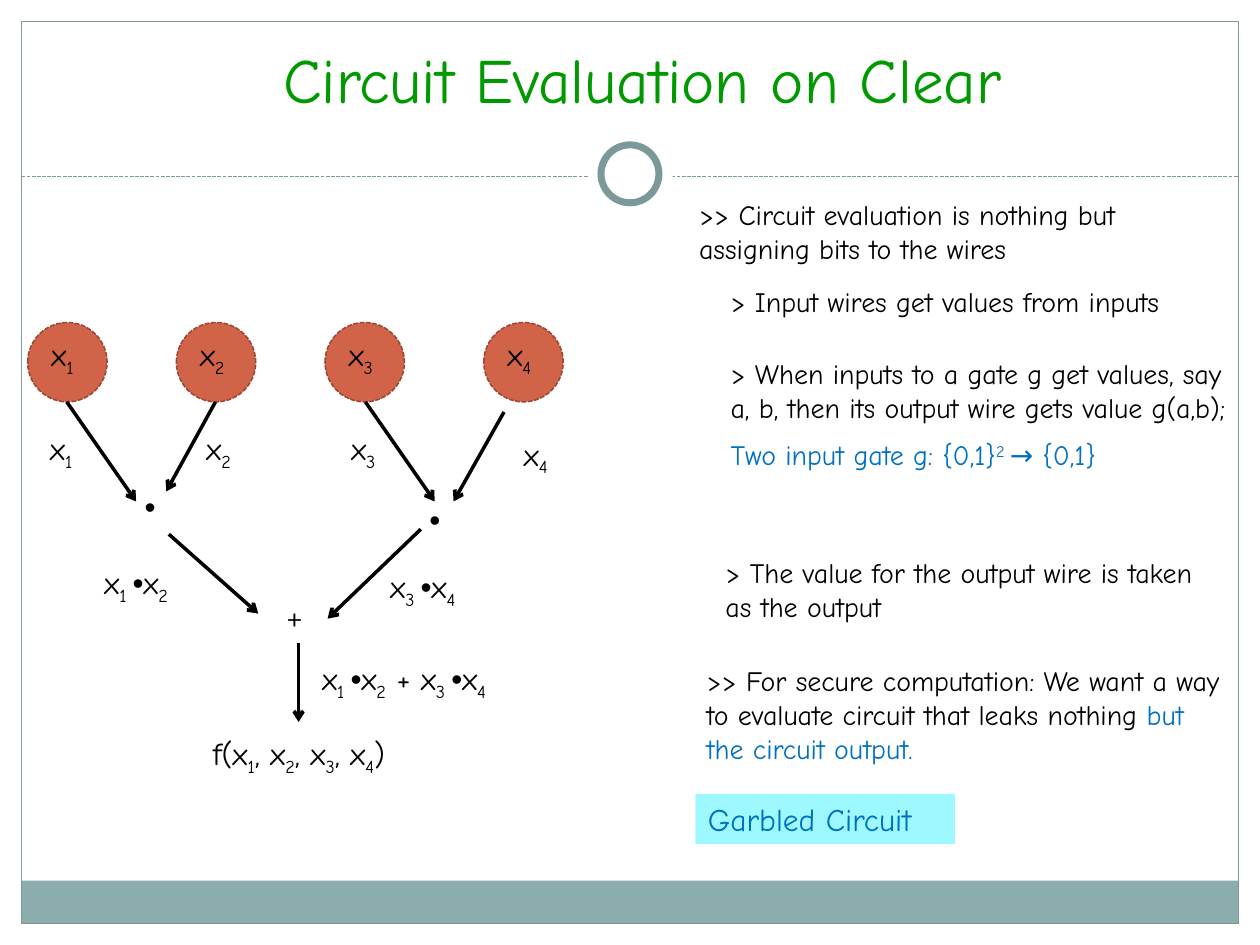
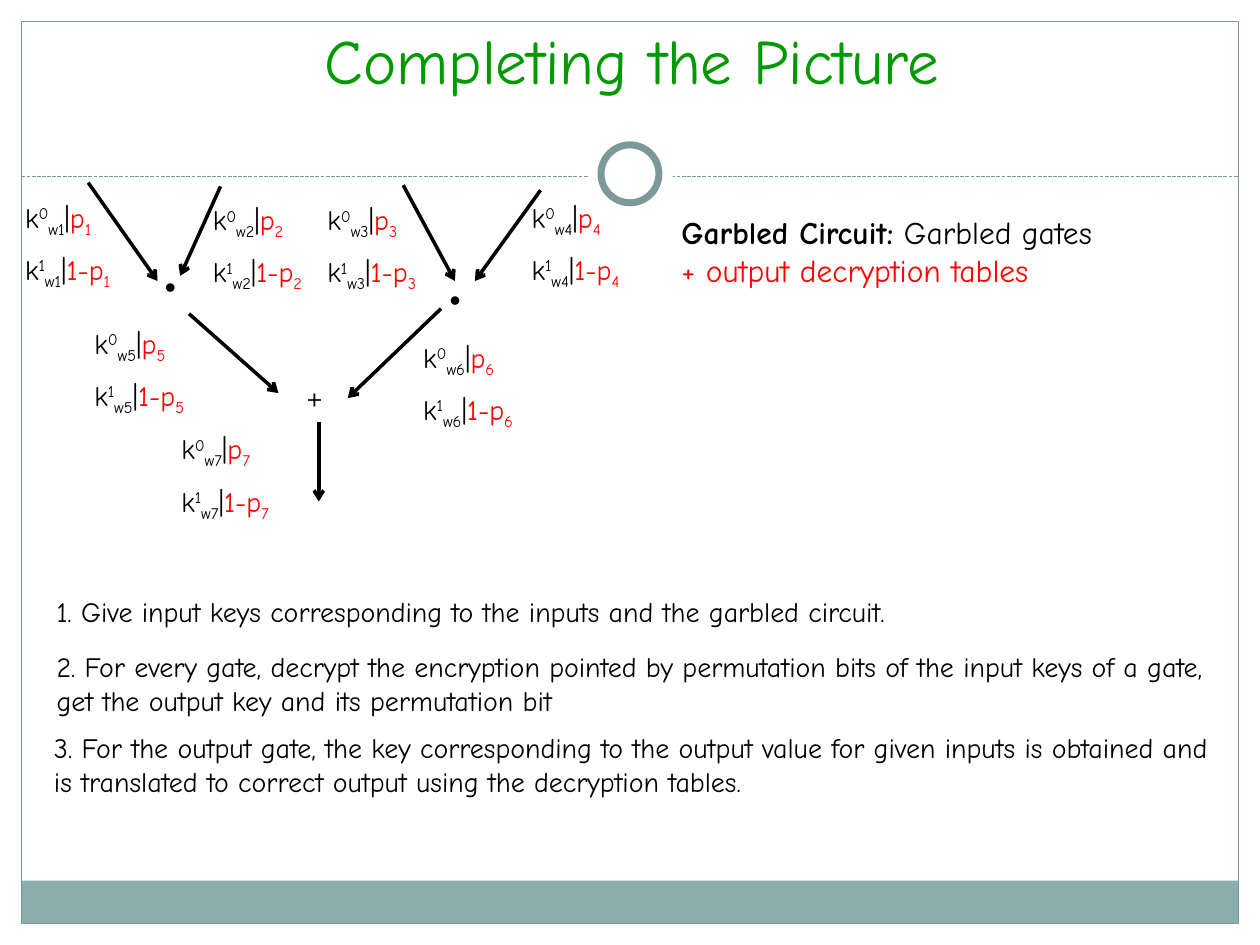
from dataclasses import dataclass

from lxml import etree
from pptx import Presentation
from pptx.dml.color import RGBColor
from pptx.enum.dml import MSO_LINE
from pptx.enum.shapes import MSO_CONNECTOR, MSO_SHAPE
from pptx.enum.text import MSO_ANCHOR, PP_ALIGN
from pptx.oxml.ns import qn
from pptx.util import Inches, Pt

BLACK = RGBColor(0x00, 0x00, 0x00)
WHITE = RGBColor(0xFF, 0xFF, 0xFF)
GREEN = RGBColor(0x00, 0x99, 0x00)
BLUE = RGBColor(0x00, 0x70, 0xC0)
RED = RGBColor(0xFF, 0x00, 0x00)
CYAN = RGBColor(0x9D, 0xF9, 0xFF)
TEAL = RGBColor(0x8C, 0xAD, 0xAE)
DARK_TEAL = RGBColor(0x7C, 0x99, 0x9A)
RUST = RGBColor(0xD1, 0x63, 0x49)
DARK_RUST = RGBColor(0x9B, 0x49, 0x36)

RECTANGLE, OVAL = MSO_SHAPE.RECTANGLE, MSO_SHAPE.OVAL
STRAIGHT = MSO_CONNECTOR.STRAIGHT
DASH = MSO_LINE.SQUARE_DOT
LEFT, CENTER = PP_ALIGN.LEFT, PP_ALIGN.CENTER
TOP = MSO_ANCHOR.TOP

FONT = "Comic Neue"
SUB, SUPER = -25, 30


@dataclass
class Span:
    text: str
    color: RGBColor = BLACK
    base: int = 0
    font: str = FONT
    bold: bool = False


BULLET = Span("•", font="Arial")
PLUS = Span("+", font="Cambria")


# Shared drawing helpers
def fill_text(shape, paras, size, align=LEFT, indent=0.1, gap=0):
    frame = shape.text_frame
    frame.word_wrap = True
    frame.vertical_anchor = TOP
    frame.margin_left = Inches(indent)
    for index, spans in enumerate(paras):
        para = frame.add_paragraph() if index else frame.paragraphs[0]
        para.alignment = align
        if index:
            para.space_before = Pt(gap)
        for span in spans:
            run = para.add_run()
            run.text = span.text
            run.font.name = span.font
            run.font.size = Pt(size)
            run.font.bold = span.bold
            run.font.color.rgb = span.color
            if span.base:
                run.font._element.set("baseline", str(span.base * 1000))


def add_text(page, box, paras, size=16, **style):
    shape = page.shapes.add_textbox(*map(Inches, box))
    fill_text(shape, paras, size, **style)


def add_figure(page, kind, box, fill=None, line=None, width=0.75, dash=None):
    shape = page.shapes.add_shape(kind, *map(Inches, box))
    shape.shadow.inherit = False
    if fill is None:
        shape.fill.background()
    else:
        shape.fill.solid()
        shape.fill.fore_color.rgb = fill
    if line is None:
        shape.line.fill.background()
    else:
        shape.line.color.rgb = line
        shape.line.width = Pt(width)
        shape.line.dash_style = dash
    return shape


def add_line(page, start, end, color=BLACK, width=2, dash=None, arrow=True):
    line = page.shapes.add_connector(STRAIGHT, *map(Inches, start + end))
    line.line.color.rgb = color
    line.line.width = Pt(width)
    line.line.dash_style = dash
    properties = line._element.spPr
    if arrow:
        etree.SubElement(properties.find(qn("a:ln")), qn("a:tailEnd"), type="arrow")
    etree.SubElement(properties, qn("a:effectLst"))


def add_page(deck, title, title_box):
    page = deck.slides.add_slide(deck.slide_layouts[6])
    # Footer band, frame, dashed rule and ring
    add_figure(page, RECTANGLE, (0.17, 6.99, 9.66, 0.34), TEAL)
    add_figure(page, RECTANGLE, (0.17, 0.17, 9.66, 7.16), line=DARK_TEAL)
    add_line(page, (0.17, 1.4), (9.83, 1.4), DARK_TEAL, 0.75, DASH, arrow=False)
    add_figure(page, OVAL, (4.67, 1.05, 0.67, 0.67), WHITE)
    add_figure(page, OVAL, (4.77, 1.15, 0.46, 0.46), WHITE, DARK_TEAL, 4)
    add_text(page, title_box, [[Span(title, GREEN)]], 36, align=CENTER)
    return page


# Formula pieces
def variable(index):
    return [Span("x"), Span(str(index), base=SUB)]


def product(first, second):
    return variable(f"{first} ") + [BULLET] + variable(second)


def key_line(bit, wire, pointer):
    return [Span("k"), Span(bit, base=SUPER), Span(f"w{wire}", base=SUB),
            Span("|"), Span(pointer, RED), Span(str(wire), RED, SUB)]


# Circuit: two AND gates feeding a plus gate
def add_circuit(page, left, top, input_wires):
    inner_wires = [((0.29, 0.42), (1.0, 1.05)),
                   ((2.29, 0.38), (1.55, 1.09)),
                   ((1.32, 1.28), (1.32, 1.91))]
    for wire in input_wires + inner_wires:
        start, end = [(left + x, top + y) for x, y in wire]
        add_line(page, start, end)
    for x, y, sign in [(0, 0, BULLET), (2.26, 0.1, BULLET), (1.12, 0.88, PLUS)]:
        add_text(page, (left + x, top + y, 0.36, 0.4), [[sign]], 18)


def add_input(page, left, top, index):
    add_figure(page, OVAL, (left, top, 0.63, 0.63), RUST, DARK_RUST, 0.9, DASH)
    add_text(page, (left + 0.09, top + 0.05, 0.54, 0.4), [variable(index)], 18)


def add_wire_keys(page, left, top, wire):
    lines = [key_line("0", wire, "p"), key_line("1", wire, "1-p")]
    add_text(page, (left, top, 1.19, 0.77), lines, gap=8)


def add_evaluation_circuit(page):
    for index, left in enumerate((0.22, 1.4, 2.58, 3.84), 1):
        add_input(page, left, 2.56, index)
    add_circuit(page, 1.05, 3.82, [((-0.52, -0.63), (0.03, 0.16)),
                                   ((0.66, -0.63), (0.27, 0.08)),
                                   ((1.85, -0.63), (2.4, 0.16)),
                                   ((2.95, -0.55), (2.55, 0.16))])
    # Values carried by the wires
    wire_spots = [(0.3, 3.36), (1.54, 3.36), (2.69, 3.36), (4.06, 3.4)]
    for index, (left, top) in enumerate(wire_spots, 1):
        add_text(page, (left, top, 0.45, 0.4), [variable(index)], 18)
    add_text(page, (0.73, 4.42, 0.98, 0.4), [product(1, 2)], 18)
    add_text(page, (3, 4.45, 0.98, 0.4), [product(3, 4)], 18)
    total = product(1, 2) + [Span(" + ")] + product(3, 4)
    add_text(page, (2.46, 5.18, 1.92, 0.4), [total], 18)
    # Circuit output
    output = [Span("f(")] + variable(1)
    for index in (2, 3, 4):
        output += [Span(", ")] + variable(index)
    add_text(page, (1.35, 5.78, 2.35, 0.4), [output + [Span(")")]], 18, indent=0.34)


def add_evaluation_notes(page):
    # Gate rule, kept inside the frame
    add_text(page, (5.7, 2.78, 4.13, 1.31), [
        [Span("> When inputs to a gate g get values, say a, b, "
              "then its output wire gets value g(a,b);")],
        [Span("Two input gate g: {0,1}", BLUE), Span("2 ", BLUE, SUPER),
         Span("→ {0,1}", BLUE)]], gap=8)
    notes = [
        ((5.45, 1.52, 4.38, 0.64),
         ">> Circuit evaluation is nothing but assigning bits to the wires", ""),
        ((5.7, 2.21, 4, 0.37), "> Input wires get values from inputs", ""),
        ((5.66, 4.36, 4.17, 0.64),
         "> The value for the output wire is taken as the output", ""),
        ((5.51, 5.22, 4.32, 0.91),
         ">> For secure computation: We want a way to evaluate circuit "
         "that leaks nothing ", "but the circuit output."),
    ]
    for box, text, ending in notes:
        spans = [Span(text)] + ([Span(ending, BLUE)] if ending else [])
        add_text(page, box, [spans])
    label = add_figure(page, RECTANGLE, (5.52, 6.3, 2.06, 0.4), CYAN)
    fill_text(label, [[Span("Garbled Circuit", BLUE)]], 18)


def add_garbled_circuit(page):
    add_circuit(page, 1.21, 2.07, [((-0.51, -0.62), (0.04, 0.16)),
                                   ((0.54, -0.59), (0.22, 0.12)),
                                   ((1.99, -0.6), (2.4, 0.16)),
                                   ((3.08, -0.56), (2.56, 0.16))])
    key_spots = [(0.1, 1.54), (1.59, 1.56), (2.5, 1.56), (4.12, 1.54),
                 (0.65, 2.54), (3.26, 2.65), (1.34, 3.38)]
    for wire, (left, top) in enumerate(key_spots, 1):
        add_wire_keys(page, left, top, wire)


def add_garbled_notes(page):
    add_text(page, (5.31, 1.64, 4.51, 0.71), [
        [Span("Garbled Circuit:", bold=True), Span(" Garbled gates")],
        [Span("+ output decryption tables", RED)]], 18)
    steps = [
        (0.35, 4.67, 0.37, "1. Give input keys corresponding to the inputs "
         "and the garbled circuit."),
        (0.35, 5.11, 0.64, "2. For every gate, decrypt the encryption pointed by "
         "permutation bits of the input keys of a gate, get the output key "
         "and its permutation bit"),
        (0.33, 5.75, 0.64, "3. For the output gate, the key corresponding to the "
         "output value for given inputs is obtained and is translated to "
         "correct output using the decryption tables."),
    ]
    for left, top, height, text in steps:
        add_text(page, (left, top, 9.48, height), [[Span(text)]])


def main():
    deck = Presentation()
    deck.slide_width, deck.slide_height = Inches(10), Inches(7.5)

    page = add_page(deck, " Circuit Evaluation on Clear", (0.2, 0.27, 9.63, 0.68))
    add_evaluation_circuit(page)
    add_evaluation_notes(page)

    page = add_page(deck, "Completing the Picture", (0.2, 0.12, 9.63, 1.17))
    add_garbled_circuit(page)
    add_garbled_notes(page)

    deck.save("out.pptx")


if __name__ == "__main__":
    main()
